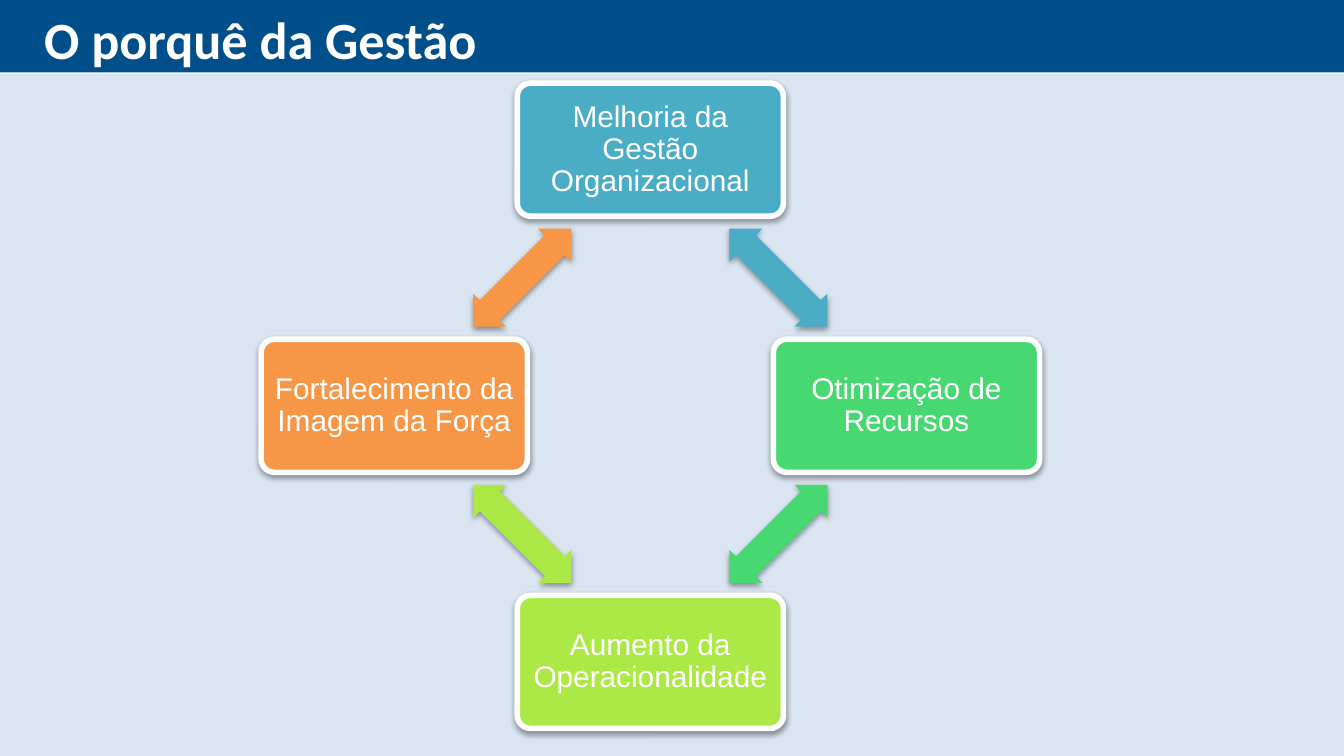
from math import cos, radians, sin

from lxml import etree
from pptx import Presentation
from pptx.dml.color import RGBColor
from pptx.enum.shapes import MSO_SHAPE
from pptx.enum.text import MSO_ANCHOR, PP_ALIGN
from pptx.oxml import parse_xml
from pptx.oxml.ns import qn
from pptx.util import Pt

RECT = MSO_SHAPE.RECTANGLE
ROUND = MSO_SHAPE.ROUNDED_RECTANGLE
ARROW = MSO_SHAPE.LEFT_RIGHT_ARROW
MIDDLE = MSO_ANCHOR.MIDDLE
LEFT, CENTER = PP_ALIGN.LEFT, PP_ALIGN.CENTER
WHITE = "FFFFFF"
SHADOW = (
    '<a:outerShdw xmlns:a="http://schemas.openxmlformats.org/drawingml/2006/main"'
    ' blurRad="40000" dist="20000" dir="5400000" rotWithShape="0">'
    '<a:srgbClr val="000000"><a:alpha val="38000"/></a:srgbClr></a:outerShdw>'
)


def color(code):
    return RGBColor.from_string(code)


def draw(kind, x, y, w, h, fill, shade=True):
    """Add a filled shape centred on x, y."""
    shape = slide.shapes.add_shape(kind, Pt(x - w / 2), Pt(y - h / 2), Pt(w), Pt(h))
    shape.fill.solid()
    shape.fill.fore_color.rgb = color(fill)
    shape.line.fill.background()
    shape.shadow.inherit = False
    if shade:
        effects = shape.element.spPr.find(qn("a:effectLst"))
        effects.append(parse_xml(SHADOW))
    return shape


prs = Presentation()
prs.slide_width, prs.slide_height = Pt(720), Pt(405)
slide = prs.slides.add_slide(prs.slide_layouts[5])

# Header band and body panel, behind the title
title = slide.shapes.title
for y, h, fill in [(0, 38.9, "004F8A"), (39.5, 365.5, "DAE5F1")]:
    band = draw(RECT, 360, y + h / 2, 720, h, fill, shade=False)
    title.element.addprevious(band.element)

# Title
title.left, title.top, title.width, title.height = Pt(18.7), Pt(0), Pt(445.7), Pt(41)
frame = title.text_frame
frame.text = "O porquê da Gestão"
frame.vertical_anchor = MIDDLE
frame.margin_left = frame.margin_right = Pt(5)
frame.margin_top = frame.margin_bottom = Pt(2.9)
para = frame.paragraphs[0]
para.alignment = LEFT
font = para.runs[0].font
font.name, font.size, font.bold = "Calibri", Pt(28), True
font.color.rgb = color(WHITE)

# Cycle: clockwise from the top, each box followed by an arrow
mid_x, mid_y, radius = 348.4, 217.4, 137.2
steps = [
    ("Melhoria da Gestão Organizacional", "4BACC6"),
    ("Otimização de Recursos", "47D872"),
    ("Aumento da Operacionalidade", "ACE946"),
    ("Fortalecimento da Imagem da Força", "F79646"),
]
for i, (text, fill) in enumerate(steps):
    angle = radians(90 * i)
    dx, dy = radius * sin(angle), -radius * cos(angle)

    box = draw(ROUND, mid_x + dx, mid_y + dy, 142.6, 71.3, fill)
    box.adjustments[0] = 0.1
    box.line.color.rgb = color(WHITE)
    box.line.width = Pt(3)
    frame = box.text_frame
    frame.text = text
    frame.word_wrap = True
    frame.vertical_anchor = MIDDLE
    frame.margin_left = frame.margin_right = Pt(3)
    frame.margin_top = frame.margin_bottom = Pt(3)
    para = frame.paragraphs[0]
    para.alignment, para.line_spacing = CENTER, 0.9
    font = para.runs[0].font
    font.name, font.size = "Arial", Pt(16)
    font.color.rgb = color(WHITE)

    # The arrow sits halfway between this box and the next
    arrow = draw(ARROW, mid_x + (dx - dy) / 2, mid_y + (dy + dx) / 2, 74.2, 25, fill)
    arrow.adjustments[0], arrow.adjustments[1] = 0.6, 0.5
    arrow.rotation = 45 + 90 * i

prs.save("out.pptx")
